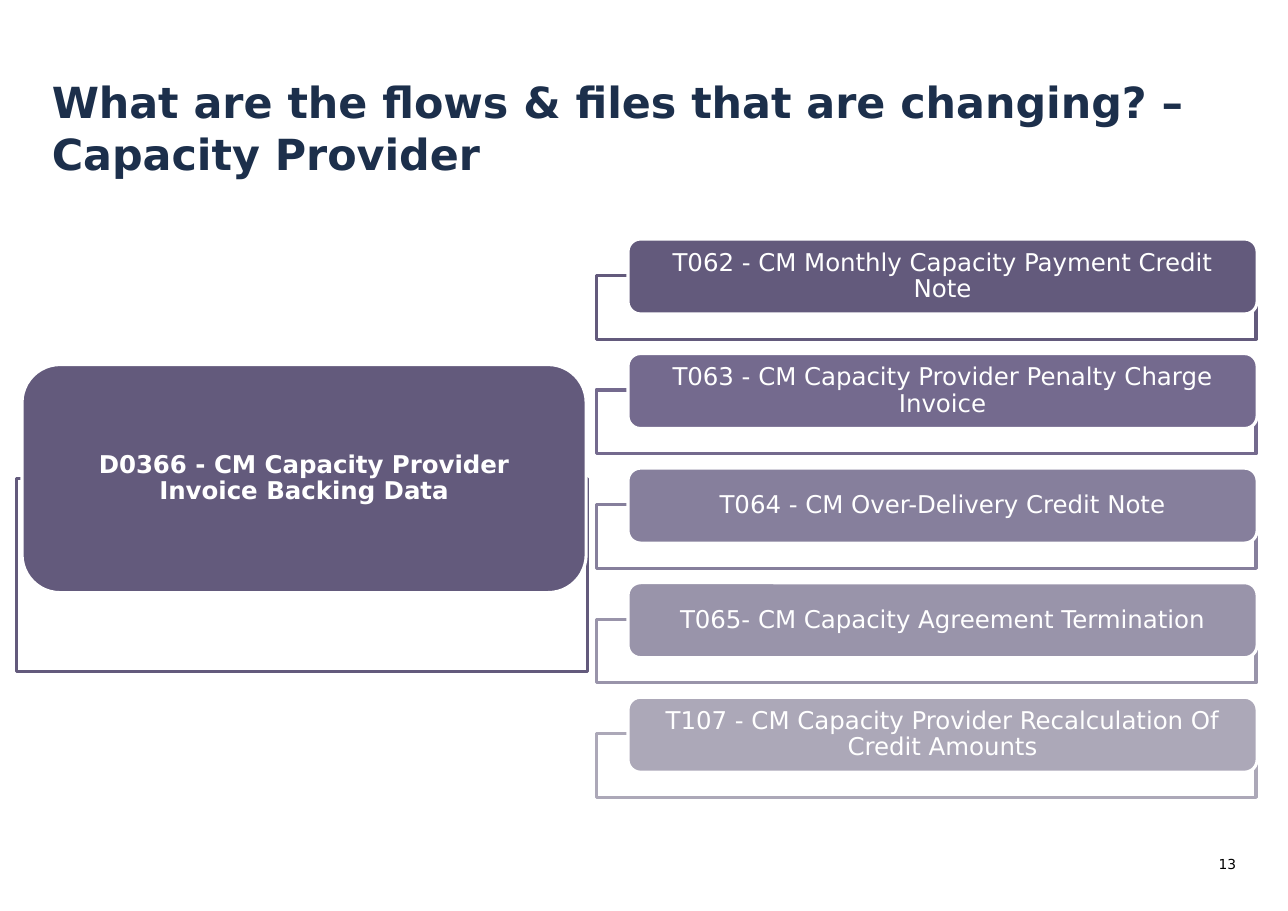
"""Build the slide on the flows and files changing for a Capacity Provider."""
import pptx
import pptx.dml.color
import pptx.enum.shapes
import pptx.enum.text
import pptx.util

Inches = pptx.util.Inches
Pt = pptx.util.Pt
SHAPES = pptx.enum.shapes.MSO_SHAPE
ALIGN = pptx.enum.text.PP_ALIGN
ANCHOR = pptx.enum.text.MSO_ANCHOR

FONT = "DejaVu Sans"
WHITE = "FFFFFF"
PURPLE = "635A7C"
FILES = [
    ("T062 - CM Monthly Capacity Payment Credit Note", PURPLE),
    ("T063 - CM Capacity Provider Penalty Charge Invoice", "746A8E"),
    ("T064 - CM Over-Delivery Credit Note", "867F9C"),
    ("T065- CM Capacity Agreement Termination", "9994AA"),
    ("T107 - CM Capacity Provider Recalculation Of Credit Amounts", "ACA8B8"),
]
ROW_PITCH = 1.04


def write(shape, text, size, color, bold, align, anchor, side_margin=0):
    frame = shape.text_frame
    frame.word_wrap = True
    frame.auto_size = pptx.enum.text.MSO_AUTO_SIZE.NONE
    frame.vertical_anchor = anchor
    frame.margin_left = frame.margin_right = Inches(side_margin)
    frame.margin_top = frame.margin_bottom = 0
    paragraph = frame.paragraphs[0]
    paragraph.alignment = align
    run = paragraph.add_run()
    run.text = text
    run.font.name = FONT
    run.font.size = Pt(size)
    run.font.bold = bold
    run.font.color.rgb = pptx.dml.color.RGBColor.from_string(color)
    return paragraph


def add_box(kind, left, top, width, height, fill, line):
    shape = slide.shapes.add_shape(
        kind, Inches(left), Inches(top), Inches(width), Inches(height))
    shape.shadow.inherit = False
    shape.fill.solid()
    shape.fill.fore_color.rgb = pptx.dml.color.RGBColor.from_string(fill)
    shape.line.color.rgb = pptx.dml.color.RGBColor.from_string(line)
    shape.line.width = Pt(2)
    return shape


presentation = pptx.Presentation()
presentation.slide_width = Inches(11.69)
presentation.slide_height = Inches(8.27)
slide = presentation.slides.add_slide(presentation.slide_layouts[5])

title = slide.shapes.title
title.left, title.top = Inches(0.47), Inches(0.69)
title.width, title.height = Inches(10.75), Inches(0.47)
write(title, "What are the flows & files that are changing? – Capacity Provider",
      28, "1C2F4B", True, ALIGN.LEFT, ANCHOR.TOP)

add_box(SHAPES.RECTANGLE, 0.15, 4.34, 5.18, 1.76, WHITE, PURPLE)
flow = add_box(SHAPES.ROUNDED_RECTANGLE, 0.2, 3.31, 5.12, 2.07, PURPLE, WHITE)
paragraph = write(flow, "D0366 - CM Capacity Provider Invoice Backing Data",
                  16, WHITE, True, ALIGN.CENTER, ANCHOR.MIDDLE, 0.14)
paragraph.line_spacing = 0.9

for row, (name, color) in enumerate(FILES):
    offset = row * ROW_PITCH
    add_box(SHAPES.RECTANGLE, 5.41, 2.5 + offset, 5.99, 0.58, WHITE, color)
    label = add_box(SHAPES.ROUNDED_RECTANGLE, 5.7, 2.17 + offset, 5.71, 0.68,
                    color, WHITE)
    paragraph = write(label, name, 16, WHITE, False, ALIGN.CENTER,
                      ANCHOR.MIDDLE, 0.16)
    paragraph.line_spacing = 0.9

page_number = slide.shapes.add_textbox(
    Inches(10.83), Inches(7.77), Inches(0.39), Inches(0.2))
write(page_number, "13", 9, "000000", False, ALIGN.RIGHT, ANCHOR.TOP)

presentation.save("out.pptx")
